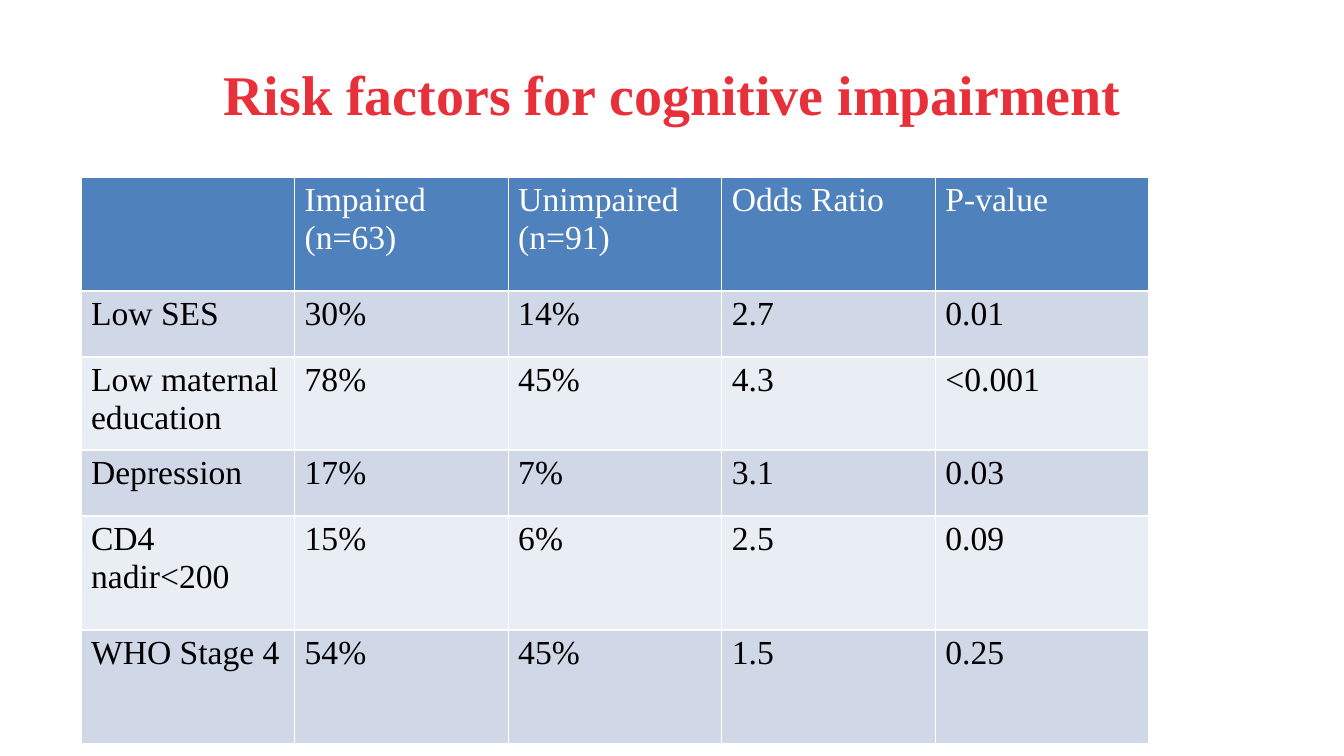
import pptx
import pptx.util
from pptx.dml.color import RGBColor
from pptx.enum.text import MSO_ANCHOR, PP_ALIGN

TITLE = "Risk factors for cognitive impairment"
ROWS = [
    ("", "Impaired (n=63)", "Unimpaired\n(n=91)", "Odds Ratio", "P-value"),
    ("Low SES", "30%", "14%", "2.7", "0.01"),
    ("Low maternal education", "78%", "45%", "4.3", "<0.001"),
    ("Depression", "17%", "7%", "3.1", "0.03"),
    ("CD4 nadir<200", "15%", "6%", "2.5", "0.09"),
    ("WHO Stage 4", "54%", "45%", "1.5", "0.25"),
]
ROW_HEIGHTS = [114, 66, 93, 66, 114, 114]
SLIDE = (1344, 756)
TITLE_BOX = (83, 30, 1178, 126)
TABLE_BOX = (81, 177, 1068, sum(ROW_HEIGHTS))

FONT = "Times New Roman"
THEME = {
    "title": {"name": FONT, "size": pptx.util.Pt(40), "bold": True, "color": "E8303B"},
    "header": {"name": FONT, "size": pptx.util.Pt(24), "bold": False, "color": "FFFFFF"},
    "body": {"name": FONT, "size": pptx.util.Pt(24), "bold": False, "color": "000000"},
    "header_fill": "4F81BD",
    "band_fills": ("D0D8E8", "E9EDF4"),
}


def px(n):
    return pptx.util.Emu(round(n * 914400 / 100.8))


def format_font(font, style):
    for key, value in style.items():
        if key == "color":
            font.color.rgb = RGBColor.from_string(value)
        else:
            setattr(font, key, value)


def add_title(s):
    sp = s.shapes.title
    sp.left, sp.top, sp.width, sp.height = map(px, TITLE_BOX)
    tf = sp.text_frame
    tf.text = TITLE
    tf.vertical_anchor = MSO_ANCHOR.MIDDLE
    p = tf.paragraphs[0]
    p.alignment = PP_ALIGN.CENTER
    format_font(p.runs[0].font, THEME["title"])


def add_risk_table(s):
    table = s.shapes.add_table(len(ROWS), len(ROWS[0]), *map(px, TABLE_BOX)).table
    for col in table.columns:
        col.width = px(TABLE_BOX[2] / len(ROWS[0]))
    for i, (texts, height) in enumerate(zip(ROWS, ROW_HEIGHTS)):
        table.rows[i].height = px(height)
        fill = THEME["band_fills"][(i - 1) % 2] if i else THEME["header_fill"]
        style = THEME["body" if i else "header"]
        for j, text in enumerate(texts):
            cell = table.cell(i, j)
            cell.fill.solid()
            cell.fill.fore_color.rgb = RGBColor.from_string(fill)
            cell.text = text
            for p in cell.text_frame.paragraphs:
                for r in p.runs:
                    format_font(r.font, style)


def main():
    prs = pptx.Presentation()
    prs.slide_width, prs.slide_height = map(px, SLIDE)
    title_only = prs.slide_layouts[5]
    s = prs.slides.add_slide(title_only)
    add_title(s)
    add_risk_table(s)
    prs.save("out.pptx")


if __name__ == "__main__":
    main()
